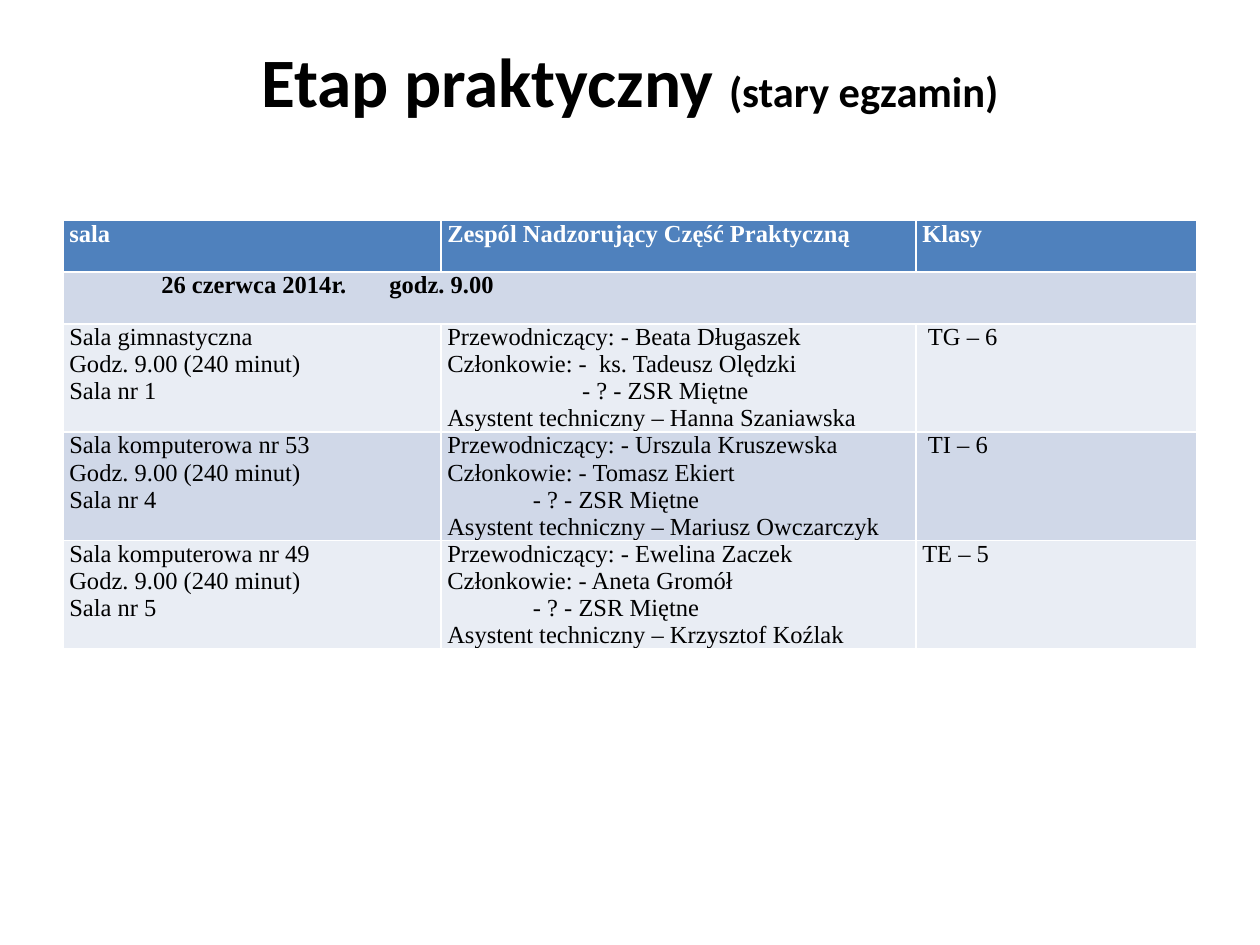
from dataclasses import dataclass

from lxml.etree import SubElement
from pptx import Presentation
from pptx.dml.color import RGBColor
from pptx.enum.text import MSO_ANCHOR, PP_ALIGN
from pptx.oxml.ns import qn
from pptx.util import Inches, Pt

COLORS = {
    "header": "4F81BD",
    "band_dark": "D0D8E8",
    "band_light": "E9EDF4",
    "white": "FFFFFF",
    "black": "000000",
}
COL_WIDTHS = (3, 3.77, 2.23)
SHORT_ROW, TALL_ROW = 0.41, 0.86
HEADERS = ("sala", "Zespól Nadzorujący Część Praktyczną", "Klasy")
DATE_LINE = "\t26 czerwca 2014r.\tgodz. 9.00"
DATE_TABS = (0.73, 2.54)


@dataclass
class Exam:
    room: str
    fallback_room: str
    chair: str
    member: str
    assistant: str
    group: str
    member_tab: float = 0.68

    def cells(self) -> tuple[str, str, str]:
        return (
            f"{self.room}\nGodz. 9.00 (240 minut)\n{self.fallback_room}",
            f"Przewodniczący: - {self.chair}\nCzłonkowie: - {self.member}\n"
            f"\t- ? - ZSR Miętne\nAsystent techniczny – {self.assistant}",
            self.group,
        )


EXAMS = (
    Exam("Sala gimnastyczna", "Sala nr 1", "Beata Długaszek",
         " ks. Tadeusz Olędzki", "Hanna Szaniawska", " TG – 6", 1.07),
    Exam("Sala komputerowa nr 53", "Sala nr 4", "Urszula Kruszewska",
         "Tomasz Ekiert", "Mariusz Owczarczyk", " TI – 6"),
    Exam("Sala komputerowa nr 49", "Sala nr 5", "Ewelina Zaczek",
         "Aneta Gromół", "Krzysztof Koźlak", "TE – 5"),
)


def style_run(r, font: str, size: float, color: str, bold: bool) -> None:
    r.font.name, r.font.size, r.font.bold = font, Pt(size), bold
    r.font.color.rgb = RGBColor.from_string(COLORS[color])


def set_tabs(p, stops: tuple[float, ...]) -> None:
    tabs = SubElement(p._p.get_or_add_pPr(), qn("a:tabLst"))
    for stop in stops:
        SubElement(tabs, qn("a:tab"), pos=str(Inches(stop)), algn="l")


def fill_cell(cell, text: str, fill: str, color: str = "black",
              bold: bool = False, tabs: tuple[float, ...] = ()) -> None:
    cell.fill.solid()
    cell.fill.fore_color.rgb = RGBColor.from_string(COLORS[fill])
    cell.margin_left = cell.margin_right = Inches(0.05)
    cell.margin_top = cell.margin_bottom = 0
    cell.text_frame.text = text
    for p in cell.text_frame.paragraphs:
        if "\t" in p.text:
            set_tabs(p, tabs)
        for r in p.runs:
            style_run(r, "Times New Roman", 14, color, bold)


def add_title(s) -> None:
    sp = s.shapes.title
    sp.left, sp.top = Inches(0.5), Inches(0.3)
    sp.width, sp.height = Inches(9), Inches(1.25)
    tf = sp.text_frame
    tf.vertical_anchor = MSO_ANCHOR.TOP
    tf.margin_top = 0
    p = tf.paragraphs[0]
    p.alignment = PP_ALIGN.CENTER
    for text, size in (("Etap praktyczny ", 39.6), ("(stary egzamin)", 24.3)):
        r = p.add_run()
        r.text = text
        style_run(r, "Calibri", size, "black", True)


def add_schedule(s) -> None:
    heights = [SHORT_ROW] * 2 + [TALL_ROW] * len(EXAMS)
    table = s.shapes.add_table(
        len(heights), len(COL_WIDTHS), Inches(0.5), Inches(1.75),
        Inches(sum(COL_WIDTHS)), Inches(sum(heights))).table
    for column, width in zip(table.columns, COL_WIDTHS):
        column.width = Inches(width)
    for row, height in zip(table.rows, heights):
        row.height = Inches(height)

    # Header and merged date row
    for col, text in enumerate(HEADERS):
        fill_cell(table.cell(0, col), text, "header", "white", True)
    date = table.cell(1, 0)
    date.merge(table.cell(1, len(COL_WIDTHS) - 1))
    fill_cell(date, DATE_LINE, "band_dark", bold=True, tabs=DATE_TABS)

    # Exam rows in alternating bands
    for row, exam in enumerate(EXAMS, start=2):
        fill = "band_dark" if row % 2 else "band_light"
        for col, text in enumerate(exam.cells()):
            fill_cell(table.cell(row, col), text, fill, tabs=(exam.member_tab,))


def main() -> None:
    prs = Presentation()
    prs.slide_width, prs.slide_height = Inches(10), Inches(7.5)
    s = prs.slides.add_slide(prs.slide_layouts[5])
    add_title(s)
    add_schedule(s)
    prs.save("out.pptx")


if __name__ == "__main__":
    main()
